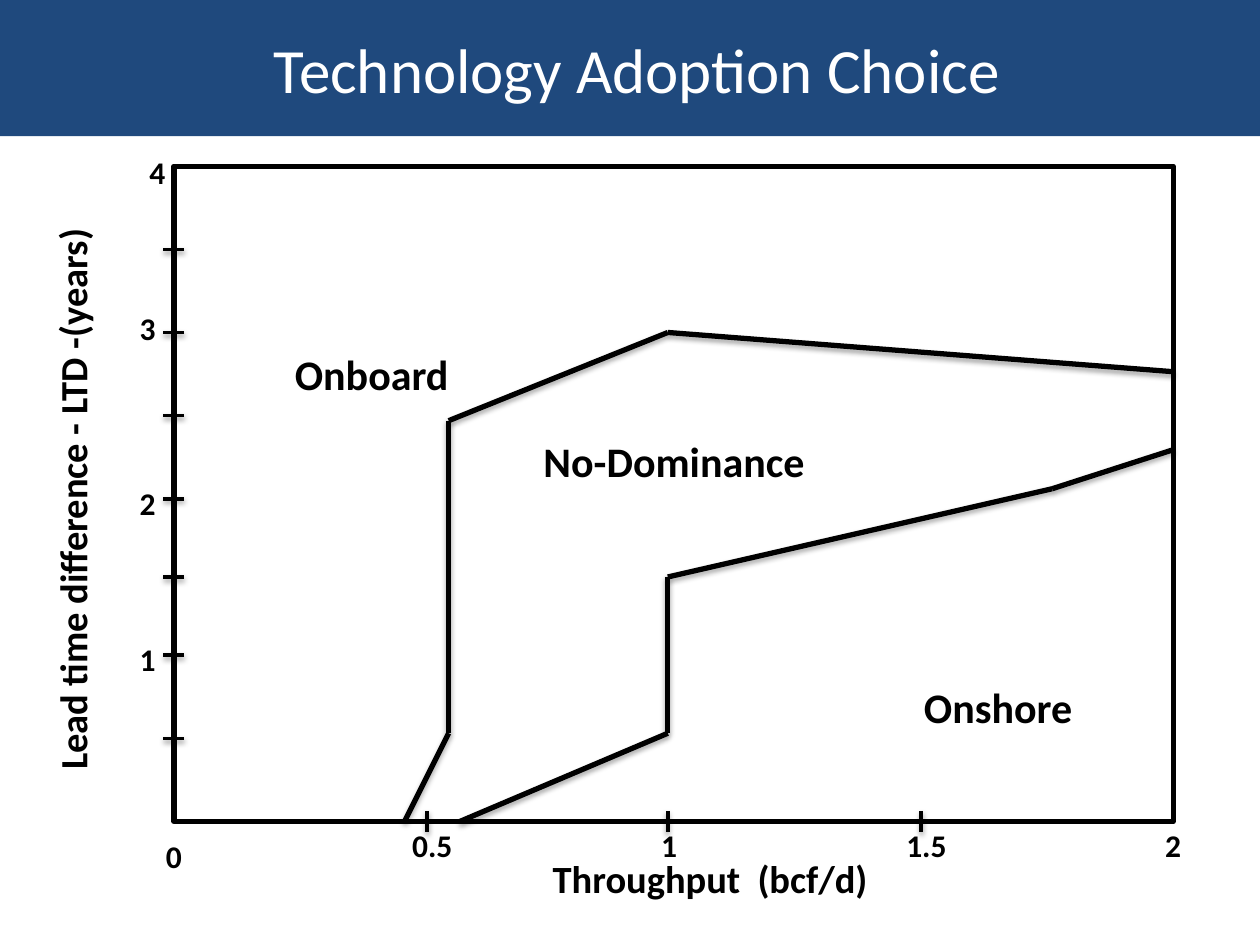
import itertools
from dataclasses import dataclass

import pptx
import pptx.util
from lxml import etree
from pptx.dml.color import RGBColor
from pptx.enum.shapes import MSO_CONNECTOR, MSO_SHAPE
from pptx.enum.text import MSO_ANCHOR, PP_ALIGN
from pptx.oxml.ns import nsdecls

Pt = pptx.util.Pt


@dataclass(frozen=True)
class Theme:
    font: str = "Calibri"
    black: RGBColor = RGBColor(0, 0, 0)
    white: RGBColor = RGBColor(255, 255, 255)
    blue: RGBColor = RGBColor(0x1F, 0x49, 0x7D)
    title: int = 36
    region: int = 24
    axis: int = 22
    tick: int = 18


THEME = Theme()

# All chart points are offsets in points from the top left of the plot.
X_TICKS = (144.7, 282.2, 427)
Y_TICKS = (47.5, 95, 142.5, 190, 234.7, 279.4, 326.9)
X_LABELS = (("0", 0, 394), ("0.5", 147.6, 388), ("1", 283, 388),
            ("1.5", 430, 388), ("2", 571, 388))
Y_LABELS = (("4", -9.4, 3), ("3", -15, 92.2), ("2", -15, 192.2),
            ("1", -15, 281.5))
REGIONS = (("Onboard", 113, 118.8), ("No-Dominance", 285.8, 168),
           ("Onshore", 471, 309))
UPPER = ((131.8, 374.4), (157, 324), (157, 145.4), (282.2, 95), (571, 117.4))
LOWER = ((163.4, 374.4), (282.2, 324), (282.2, 234.7), (501.8, 184.3),
         (571, 162))


def write(shape, text, size, color, bold):
    frame = shape.text_frame
    frame.word_wrap = True
    frame.vertical_anchor = MSO_ANCHOR.MIDDLE
    para = frame.paragraphs[0]
    para.text = text
    para.alignment = PP_ALIGN.CENTER
    font = para.font
    font.name, font.size, font.bold = THEME.font, Pt(size), bold
    font.color.rgb = color


def add_rect(slide, box, fill):
    shape = slide.shapes.add_shape(MSO_SHAPE.RECTANGLE, *map(Pt, box))
    shape.shadow.inherit = False
    shape.fill.solid()
    shape.fill.fore_color.rgb = fill
    return shape


def add_label(slide, text, mid, size, wide, turn=0):
    """Centre bold text on the point mid."""
    high = size * 1.5
    box = (mid[0] - wide / 2, mid[1] - high / 2, wide, high)
    label = slide.shapes.add_textbox(*map(Pt, box))
    label.rotation = turn
    write(label, text, size, THEME.black, True)


def add_line(slide, start, end, width, alpha):
    """Draw a black line with a soft shadow below it."""
    line = slide.shapes.add_connector(
        MSO_CONNECTOR.STRAIGHT, *map(Pt, (*start, *end)))
    line.line.color.rgb = THEME.black
    line.line.width = Pt(width)
    line._element.spPr.append(etree.fromstring(
        f'<a:effectLst {nsdecls("a")}>'
        f'<a:outerShdw blurRad="{Pt(3.1)}" dist="{Pt(1.7)}" dir="5400000" '
        f'rotWithShape="0"><a:srgbClr val="{THEME.black}">'
        f'<a:alpha val="{alpha * 1000}"/></a:srgbClr></a:outerShdw>'
        '</a:effectLst>'))


def add_title(slide, box):
    bar = add_rect(slide, box, THEME.blue)
    bar.line.fill.background()
    write(bar, " Technology Adoption Choice", THEME.title, THEME.white, False)


def add_plot(slide, box):
    left, top, wide, high = box

    def at(x, y):
        return left + x, top + y

    frame = add_rect(slide, box, THEME.white)
    frame.line.color.rgb = THEME.black
    frame.line.width = Pt(3)

    half = 6
    ticks = [((x, high - half), (x, high + half)) for x in X_TICKS]
    ticks += [((-half, y), (half, y)) for y in Y_TICKS]
    for start, end in ticks:
        add_line(slide, at(*start), at(*end), 2, 38)
    for curve in (UPPER, LOWER):
        for start, end in itertools.pairwise(curve):
            add_line(slide, at(*start), at(*end), 3, 35)

    for text, x, y in X_LABELS + Y_LABELS:
        add_label(slide, text, at(x, y), THEME.tick, 56)
    for text, x, y in REGIONS:
        add_label(slide, text, at(x, y), THEME.region, 194)
    add_label(slide, "Throughput  (bcf/d)", at(306.4, 407), THEME.axis, wide)
    add_label(slide, "Lead time difference - LTD -(years)",
              at(-58.3, 190.4), THEME.axis, 379, 270)


def main():
    deck = pptx.Presentation()
    deck.slide_width, deck.slide_height = Pt(720), Pt(540)
    slide = deck.slides.add_slide(deck.slide_layouts[6])
    add_plot(slide, (99.4, 95, 571, 374.4))
    add_title(slide, (0, 0, 720, 77.8))
    deck.save("out.pptx")


if __name__ == "__main__":
    main()
